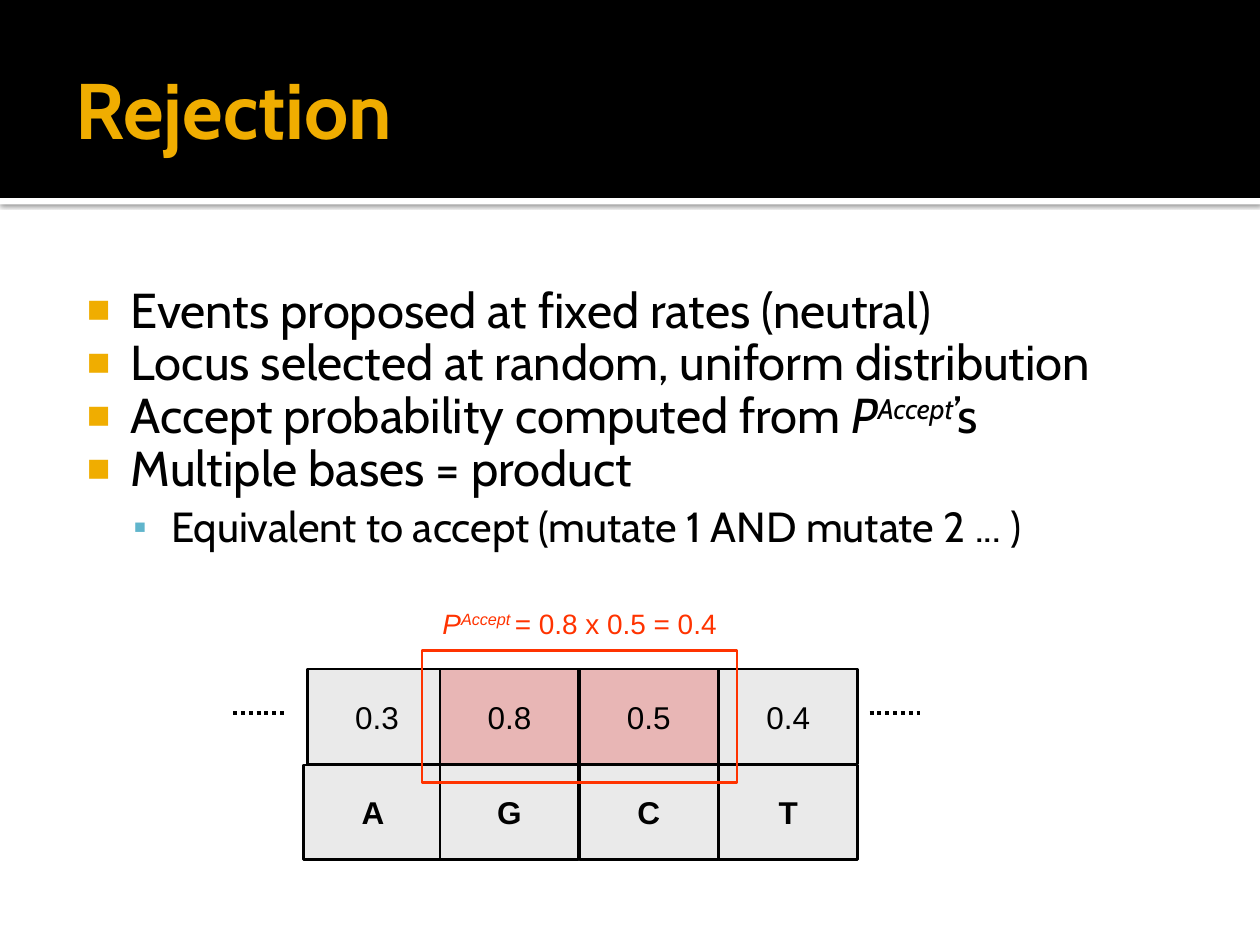
from dataclasses import dataclass
from typing import Optional

from lxml.etree import SubElement
from pptx import Presentation
from pptx.dml.color import RGBColor
from pptx.enum.dml import MSO_LINE
from pptx.enum.shapes import MSO_CONNECTOR, MSO_SHAPE
from pptx.enum.text import MSO_ANCHOR, PP_ALIGN
from pptx.oxml.ns import qn
from pptx.util import Cm, Pt

BLACK, WHITE, GOLD, BLUE = "000000", "FFFFFF", "F0AD00", "60B5CC"
GREY, PINK, RED = "EAEAEA", "E8B6B5", "FF3300"
HEADING_FONT, DIAGRAM_FONT = "Cabin", "Arial"


@dataclass(frozen=True)
class Box:
    left: float
    top: float
    width: float
    height: float

    def lengths(self) -> tuple:
        return Cm(self.left), Cm(self.top), Cm(self.width), Cm(self.height)


@dataclass(frozen=True)
class Style:
    font: str
    size: float
    color: str
    bold: bool = False


@dataclass(frozen=True)
class Piece:
    text: str
    italic: bool = False
    raised: bool = False


@dataclass(frozen=True)
class Level:
    depth: int
    style: Style
    margin: float
    hanging: float
    space_before: float
    symbol: str
    symbol_color: str
    symbol_percent: int


@dataclass(frozen=True)
class Bullet:
    level: Level
    pieces: tuple


@dataclass(frozen=True)
class Row:
    top: float
    first_left: float
    labels: tuple
    fills: tuple
    bold: bool = False


MAIN = Level(0, Style(HEADING_FONT, 28, BLACK), 1.22, 0.89, 0, "■", GOLD, 80)
SUB = Level(1, Style(HEADING_FONT, 24, BLACK), 2.03, 0.76, 4.8, "▪", BLUE, 90)

BULLETS = (
    Bullet(MAIN, (Piece("Events proposed at fixed rates (neutral)"),)),
    Bullet(MAIN, (Piece("Locus selected at random, uniform distribution"),)),
    Bullet(MAIN, (
        Piece("Accept probability computed from "),
        Piece("P", italic=True),
        Piece("Accept", italic=True, raised=True),
        Piece("’s"),
    )),
    Bullet(MAIN, (Piece("Multiple bases = product"),)),
    Bullet(SUB, (Piece("Equivalent to accept (mutate 1 AND mutate 2 ... )"),)),
)
PRODUCT = (
    Piece("P", italic=True),
    Piece("Accept ", italic=True, raised=True),
    Piece("= 0.8 x 0.5 = 0.4"),
)
ROWS = (
    Row(13.49, 6.2, ("0.3", "0.8", "0.5", "0.4"), (GREY, PINK, PINK, GREY)),
    Row(15.42, 6.12, ("A", "G", "C", "T"), (GREY,) * 4, bold=True),
)
SECOND_LEFT, COLUMN_STEP = 8.87, 2.81
CELL_WIDTH, CELL_HEIGHT = 2.8, 1.91
DOTS_TOP, DOTS_LENGTH, DOTS_LEFTS = 14.38, 1.02, (4.7, 17.53)


def rgb(color: str) -> RGBColor:
    return RGBColor.from_string(color)


def add_rect(slide, box: Box, fill: Optional[str], line: Optional[str] = None):
    rect = slide.shapes.add_shape(MSO_SHAPE.RECTANGLE, *box.lengths())
    rect.shadow.inherit = False
    if fill:
        rect.fill.solid()
        rect.fill.fore_color.rgb = rgb(fill)
    else:
        rect.fill.background()
    if line:
        rect.line.color.rgb = rgb(line)
        rect.line.width = Pt(1.5)
    else:
        rect.line.fill.background()
    return rect


def add_shadow(shape) -> None:
    effects = shape._element.spPr.find(qn("a:effectLst"))
    shadow = SubElement(effects, qn("a:outerShdw"), blurRad=str(Pt(2.5)),
                        dist=str(Pt(0.8)), dir="5400000", algn="t", rotWithShape="0")
    color = SubElement(shadow, qn("a:srgbClr"), val=BLACK)
    SubElement(color, qn("a:alpha"), val="60000")


def add_text_frame(slide, box: Box, insets: tuple = (0.25, 0.13, 0.25, 0.13)):
    frame = slide.shapes.add_textbox(*box.lengths()).text_frame
    frame.word_wrap = True
    (frame.margin_left, frame.margin_top,
     frame.margin_right, frame.margin_bottom) = map(Cm, insets)
    return frame


def format_run(run, style: Style, italic: bool = False) -> None:
    run.font.name = style.font
    run.font.size = Pt(style.size)
    run.font.bold = style.bold
    run.font.italic = italic
    run.font.color.rgb = rgb(style.color)


def write_pieces(paragraph, pieces: tuple, style: Style) -> None:
    for piece in pieces:
        run = paragraph.add_run()
        run.text = piece.text
        format_run(run, style, piece.italic)
        if piece.raised:
            run._r.get_or_add_rPr().set("baseline", "30000")


def write_bullet(paragraph, bullet: Bullet) -> None:
    level = bullet.level
    paragraph.level = level.depth
    paragraph.line_spacing = 0.9
    paragraph.space_before = Pt(level.space_before)
    properties = paragraph._p.get_or_add_pPr()
    properties.set("marL", str(Cm(level.margin)))
    properties.set("indent", str(-Cm(level.hanging)))
    color = SubElement(properties, qn("a:buClr"))
    SubElement(color, qn("a:srgbClr"), val=level.symbol_color)
    SubElement(properties, qn("a:buSzPct"), val=str(level.symbol_percent * 1000))
    SubElement(properties, qn("a:buFont"), typeface=DIAGRAM_FONT)
    SubElement(properties, qn("a:buChar"), char=level.symbol)
    write_pieces(paragraph, bullet.pieces, level.style)


def add_row(slide, row: Row) -> None:
    style = Style(DIAGRAM_FONT, 18, BLACK, row.bold)
    for column, (label, fill) in enumerate(zip(row.labels, row.fills)):
        left = SECOND_LEFT + (column - 1) * COLUMN_STEP if column else row.first_left
        cell = add_rect(slide, Box(left, row.top, CELL_WIDTH, CELL_HEIGHT), fill, BLACK)
        frame = cell.text_frame
        frame.word_wrap = False
        frame.vertical_anchor = MSO_ANCHOR.MIDDLE
        frame.text = label
        frame.paragraphs[0].alignment = PP_ALIGN.CENTER
        format_run(frame.paragraphs[0].runs[0], style)


def add_dots(slide, left: float) -> None:
    dots = slide.shapes.add_connector(MSO_CONNECTOR.STRAIGHT, Cm(left), Cm(DOTS_TOP),
                                      Cm(left + DOTS_LENGTH), Cm(DOTS_TOP))
    dots.line.color.rgb = rgb(BLACK)
    dots.line.width = Pt(2.25)
    dots.line.dash_style = MSO_LINE.ROUND_DOT
    SubElement(dots._element.spPr, qn("a:effectLst"))


def main() -> None:
    deck = Presentation()
    deck.slide_width, deck.slide_height = Cm(25.4), Cm(19.05)
    slide = deck.slides.add_slide(deck.slide_layouts[6])
    slide.background.fill.solid()
    slide.background.fill.fore_color.rgb = rgb(WHITE)

    add_shadow(add_rect(slide, Box(0, 3.99, 25.4, 0.13), WHITE))
    add_rect(slide, Box(0, 0, 25.4, 3.99), BLACK)

    title = add_text_frame(slide, Box(1.27, 0.43, 22.86, 3.48), (0.25, 0.13, 0.13, 0.13))
    title.vertical_anchor = MSO_ANCHOR.MIDDLE
    title.text = "Rejection"
    format_run(title.paragraphs[0].runs[0], Style(HEADING_FONT, 45, GOLD, bold=True))

    body = add_text_frame(slide, Box(1.27, 5.51, 22.86, 6.17), (0.15, 0.25, 0.25, 0.13))
    for index, bullet in enumerate(BULLETS):
        write_bullet(body.add_paragraph() if index else body.paragraphs[0], bullet)

    add_row(slide, ROWS[0])
    for left in DOTS_LEFTS:
        add_dots(slide, left)
    product = add_text_frame(slide, Box(8.51, 12.09, 6.35, 0.94)).paragraphs[0]
    product.alignment = PP_ALIGN.CENTER
    write_pieces(product, PRODUCT, Style(DIAGRAM_FONT, 16, RED))
    add_row(slide, ROWS[1])
    add_rect(slide, Box(8.51, 13.11, 6.35, 2.67), None, RED)

    deck.save("out.pptx")


if __name__ == "__main__":
    main()
